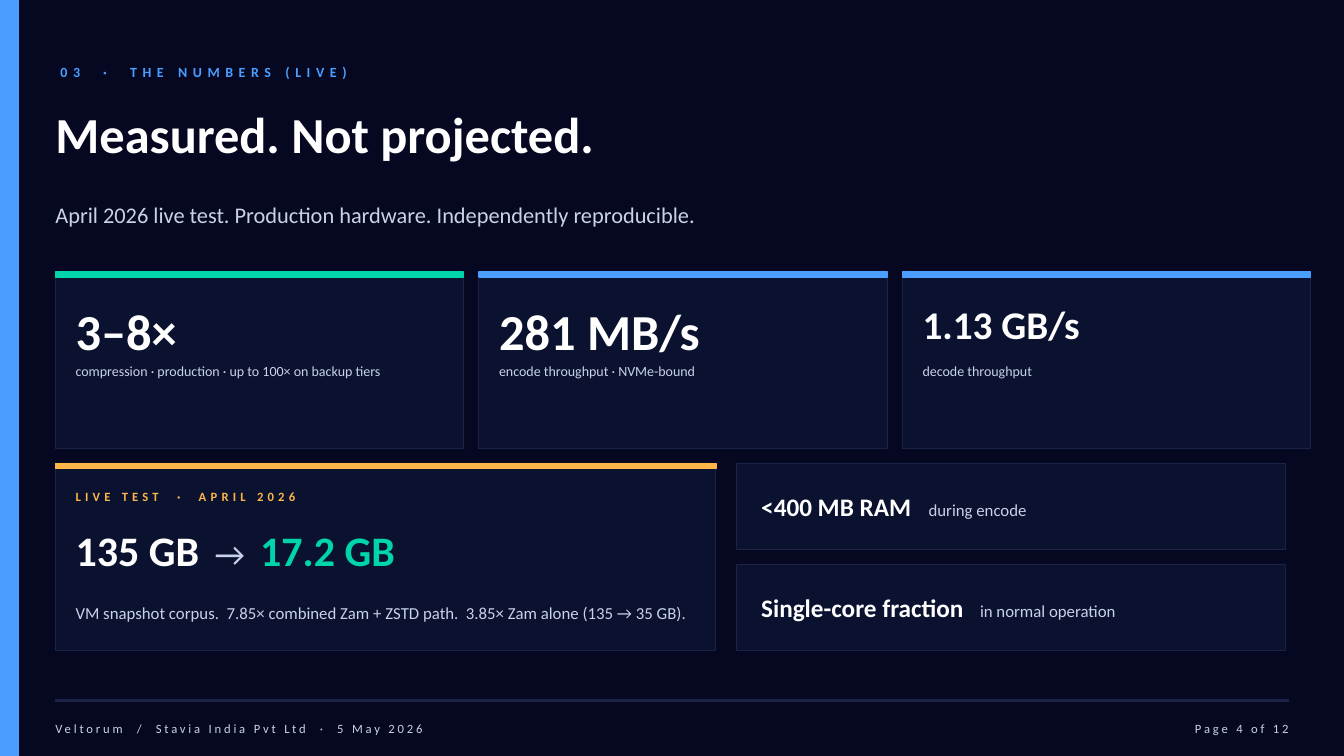
from lxml import etree
from pptx import Presentation
from pptx.dml.color import RGBColor
from pptx.enum.shapes import MSO_CONNECTOR as CONNECTOR, MSO_SHAPE as SHAPE
from pptx.enum.text import MSO_ANCHOR as ANCHOR, PP_ALIGN as ALIGN
from pptx.oxml.ns import qn
from pptx.util import Pt

PX = 9144
COLORS = {
    "night": "050820", "panel": "0A1230", "edge": "1B2347", "blue": "4A9EFF",
    "green": "00D4AA", "amber": "FFB547", "white": "FFFFFF", "mist": "C9D2E8",
}
STYLES = {
    "eyebrow": ({"size": Pt(10), "bold": True}, "blue", 400),
    "title": ({"size": Pt(36), "bold": True}, "white", 0),
    "subtitle": ({"size": Pt(16)}, "mist", 0),
    "metric": ({"size": Pt(28), "bold": True}, "white", 0),
    "caption": ({"size": Pt(10)}, "mist", 0),
    "label": ({"size": Pt(9), "bold": True}, "amber", 300),
    "before": ({"size": Pt(30), "bold": True}, "white", 0),
    "arrow": ({"size": Pt(24)}, "mist", 0),
    "after": ({"size": Pt(30), "bold": True}, "green", 0),
    "fact": ({"size": Pt(18), "bold": True}, "white", 0),
    "detail": ({"size": Pt(12)}, "mist", 0),
    "footer": ({"size": Pt(9)}, "mist", 200),
}


def add_block(left, top, width, height, fill, edge=None, weight=1):
    block = page.shapes.add_shape(SHAPE.RECTANGLE, left * PX, top * PX, width * PX, height * PX)
    block.shadow.inherit = False
    block.fill.solid()
    block.fill.fore_color.rgb = RGBColor.from_string(COLORS[fill])
    block.line.color.rgb = RGBColor.from_string(COLORS[edge or fill])
    block.line.width = Pt(weight)


def add_text(left, top, width, height, pieces, anchor=ANCHOR.MIDDLE, align=ALIGN.LEFT, tab=None):
    box = page.shapes.add_textbox(left * PX, top * PX, width * PX, height * PX)
    frame = box.text_frame
    layout = {"word_wrap": True, "vertical_anchor": anchor, "margin_left": 0,
              "margin_top": 0, "margin_right": 0, "margin_bottom": 0}
    for name, value in layout.items():
        setattr(frame, name, value)
    para = frame.paragraphs[0]
    para.alignment = align
    if tab:
        stops = etree.SubElement(para._p.get_or_add_pPr(), qn("a:tabLst"))
        etree.SubElement(stops, qn("a:tab"), pos=str(tab * PX), algn="l")
    for text, style in pieces:
        span = para.add_run()
        span.text = text
        values, color, spacing = STYLES[style]
        for name, value in {"name": "Calibri", "bold": False, **values}.items():
            setattr(span.font, name, value)
        span.font.color.rgb = RGBColor.from_string(COLORS[color])
        if spacing:
            span._r.get_or_add_rPr().set("spc", str(spacing))


deck = Presentation()
deck.slide_width, deck.slide_height = 1333 * PX, 750 * PX
page = deck.slides.add_slide(deck.slide_layouts[6])
page.background.fill.solid()
page.background.fill.fore_color.rgb = RGBColor.from_string(COLORS["night"])

add_block(0, 0, 18, 750, "blue")
add_text(60, 55, 800, 32, [("03  ·  THE NUMBERS (LIVE)", "eyebrow")])
add_text(55, 90, 1220, 85, [("Measured. Not projected.", "title")])
add_text(55, 185, 1220, 55, [
    ("April 2026 live test. Production hardware. Independently reproducible.", "subtitle")])

metrics = [
    ("3–8×", "title", "compression · production · up to 100× on backup tiers", "green"),
    ("281 MB/s", "title", "encode throughput · NVMe-bound", "blue"),
    ("1.13 GB/s", "metric", "decode throughput", "blue"),
]
for column, (value, style, caption, accent) in enumerate(metrics):
    left = 55 + column * 420
    add_block(left, 270, 405, 175, "panel", "edge", 0.75)
    add_block(left, 270, 405, 5, accent)
    add_text(left + 20, 298, 365, 96, [(value, style)], ANCHOR.TOP)
    add_text(left + 20, 360, 365, 70, [(caption, "caption")], ANCHOR.TOP)

add_block(55, 460, 655, 185, "panel", "edge", 0.75)
add_block(55, 460, 655, 5, "amber")
add_text(75, 478, 600, 30, [("LIVE TEST  ·  APRIL 2026", "label")])
add_text(75, 510, 615, 70, [("135 GB", "before"), ("  →  ", "arrow"), ("17.2 GB", "after")])
add_text(75, 580, 615, 55, [
    ("VM snapshot corpus.  7.85× combined Zam + ZSTD path.  3.85× Zam alone (135 → 35 GB).", "detail")])

facts = [
    ("<400 MB RAM", "during encode", 166),
    ("Single-core fraction", "in normal operation", 217),
]
for row, (fact, detail, tab) in enumerate(facts):
    top = 460 + row * 100
    add_block(730, top, 545, 85, "panel", "edge", 0.75)
    add_text(755, top, 505, 85, [(fact + "\t", "fact"), (detail, "detail")], tab=tab)

rule = page.shapes.add_connector(CONNECTOR.STRAIGHT, 55 * PX, 695 * PX, 1278 * PX, 695 * PX)
rule.line.color.rgb = RGBColor.from_string(COLORS["edge"])
rule.line.width = Pt(1.75)
etree.SubElement(rule._element.spPr, qn("a:effectLst"))
add_text(55, 708, 800, 30, [("Veltorum  /  Stavia India Pvt Ltd  ·  5 May 2026", "footer")])
add_text(1028, 708, 250, 30, [("Page 4 of 12", "footer")], align=ALIGN.RIGHT)

deck.save("out.pptx")
